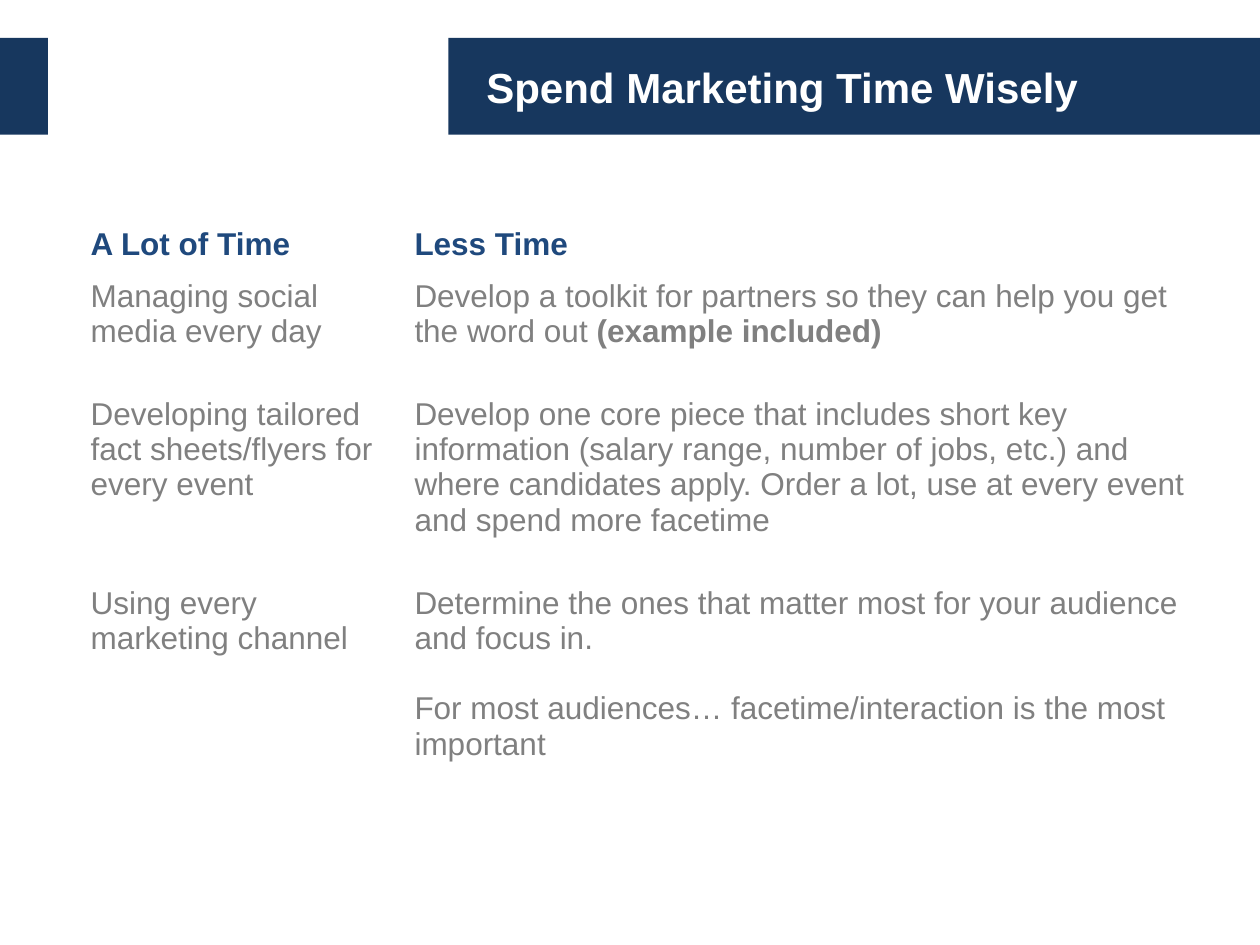
import pptx
import pptx.dml.color
import pptx.enum.shapes
import pptx.enum.text
import pptx.util

Inches = pptx.util.Inches
Pt = pptx.util.Pt

COLORS = {"navy": "17375E", "heading": "1F497D", "body": "808080", "white": "FFFFFF"}
TITLE = "Spend Marketing Time Wisely"
HEADINGS = ["A Lot of Time", "Less Time"]
ROWS = [
    (
        ["Managing social media every day"],
        [[("Develop a toolkit for partners so they can help you get the word out ", False),
          ("(example included)", True)]],
    ),
    (
        ["Developing tailored fact sheets/flyers for every event"],
        ["Develop one core piece that includes short key information (salary range, "
         "number of jobs, etc.) and where candidates apply. Order a lot, use at every "
         "event and spend more facetime"],
    ),
    (
        ["Using every marketing channel"],
        ["Determine the ones that matter most for your audience and focus in.",
         "For most audiences… facetime/interaction is the most important"],
    ),
]
COLUMN_WIDTHS = [2.57, 6.43]
ROW_HEIGHTS = [0.41, 0.94, 1.5, 1.76]
BAR_TOP, BAR_HEIGHT = 0.3, 0.77
BARS = [(3.56, 6.44), (0, 0.38)]


def rgb(name):
    return pptx.dml.color.RGBColor.from_string(COLORS[name])


def write_text(text_frame, paragraphs, size=18, color="body", bold=False, gap=20):
    for index, content in enumerate(paragraphs):
        paragraph = text_frame.paragraphs[0] if index == 0 else text_frame.add_paragraph()
        paragraph.alignment = pptx.enum.text.PP_ALIGN.LEFT
        if index:
            paragraph.space_before = Pt(gap)
        runs = [(content, bold)] if isinstance(content, str) else content
        for text, run_bold in runs:
            run = paragraph.add_run()
            run.text = text
            run.font.name = "Arial"
            run.font.size = Pt(size)
            run.font.bold = run_bold
            run.font.color.rgb = rgb(color)


def add_bar(slide, left, width):
    bar = slide.shapes.add_shape(
        pptx.enum.shapes.MSO_SHAPE.RECTANGLE,
        Inches(left), Inches(BAR_TOP), Inches(width), Inches(BAR_HEIGHT))
    bar.shadow.inherit = False
    bar.fill.solid()
    bar.fill.fore_color.rgb = rgb("navy")
    bar.line.fill.background()


def format_title(title):
    title.left, title.top = Inches(3.76), Inches(BAR_TOP)
    title.width, title.height = Inches(5.74), Inches(BAR_HEIGHT)
    title.text_frame.vertical_anchor = pptx.enum.text.MSO_ANCHOR.MIDDLE
    write_text(title.text_frame, [TITLE], size=24, color="white", bold=True)
    title.element.getparent().append(title.element)


def add_comparison(slide):
    table = slide.shapes.add_table(
        len(ROW_HEIGHTS), len(COLUMN_WIDTHS), Inches(0.62), Inches(1.75),
        Inches(sum(COLUMN_WIDTHS)), Inches(sum(ROW_HEIGHTS))).table
    table.first_row = False
    table.horz_banding = False
    for column, width in zip(table.columns, COLUMN_WIDTHS):
        column.width = Inches(width)
    for row, height in zip(table.rows, ROW_HEIGHTS):
        row.height = Inches(height)
    for cell in table.iter_cells():
        cell.fill.background()
    for column_index, heading in enumerate(HEADINGS):
        write_text(table.cell(0, column_index).text_frame, [heading],
                   color="heading", bold=True)
    for row_index, row in enumerate(ROWS, start=1):
        for column_index, paragraphs in enumerate(row):
            write_text(table.cell(row_index, column_index).text_frame, paragraphs)


def main():
    presentation = pptx.Presentation()
    presentation.slide_width = Inches(10)
    presentation.slide_height = Inches(7.5)
    slide = presentation.slides.add_slide(presentation.slide_layouts[5])
    for left, width in BARS:
        add_bar(slide, left, width)
    format_title(slide.shapes.title)
    add_comparison(slide)
    presentation.save("out.pptx")


if __name__ == "__main__":
    main()
